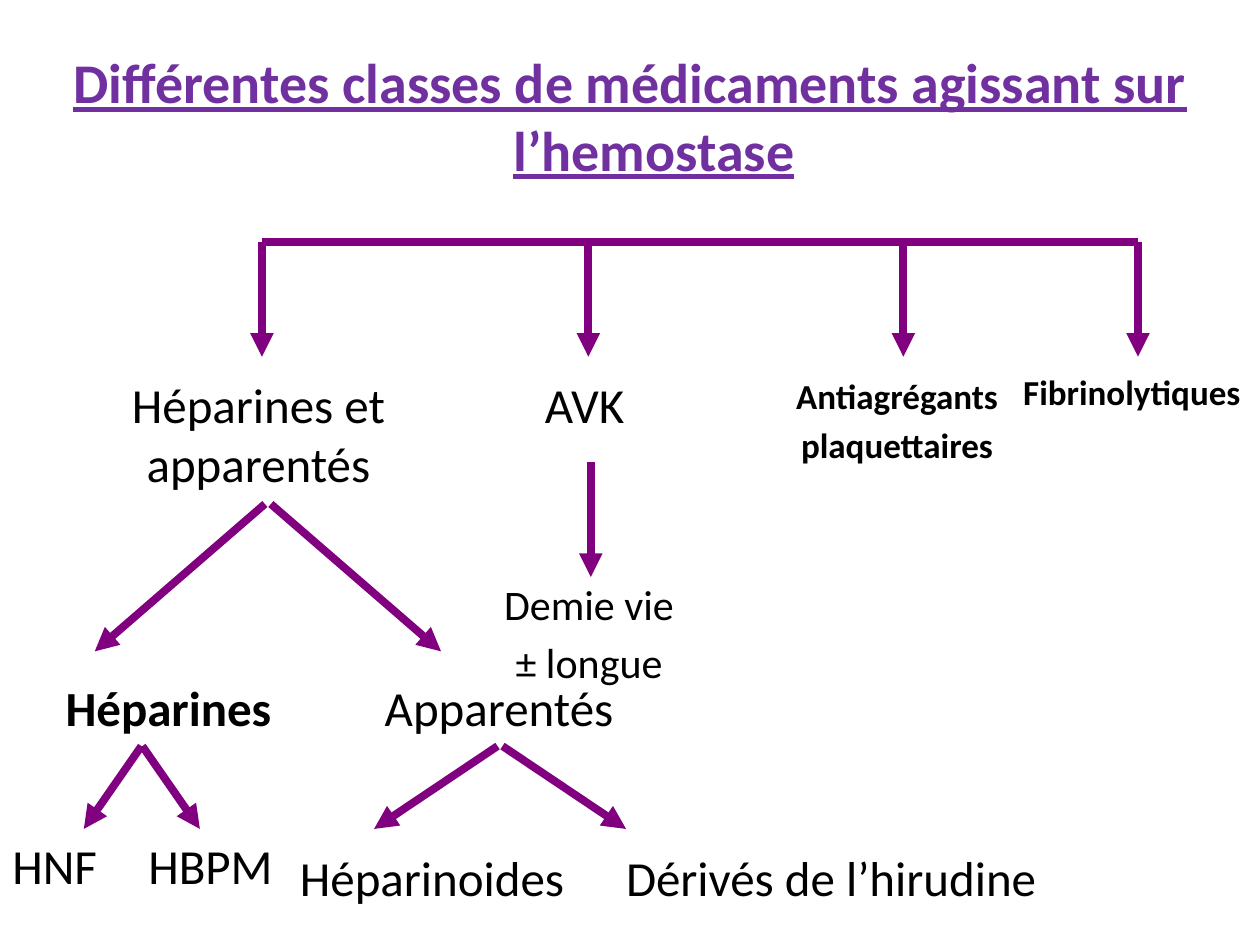
from dataclasses import dataclass

from lxml.etree import SubElement
from pptx import Presentation
from pptx.dml.color import RGBColor as RGB
from pptx.enum.shapes import MSO_CONNECTOR as Link
from pptx.enum.text import PP_ALIGN as Align
from pptx.oxml.ns import qn
from pptx.util import Cm, Pt


@dataclass(frozen=True)
class Theme:
    font: str = "Calibri"
    ink: RGB = RGB(0x00, 0x00, 0x00)
    title: RGB = RGB(0x70, 0x30, 0xA0)
    arrow: RGB = RGB(0x80, 0x00, 0x80)
    stroke: float = 4.5
    huge: int = 32
    big: int = 28
    mid: int = 24
    small: int = 20


THEME = Theme()


def add_text(slide, box, lines, size=THEME.big, bold=False, align=Align.CENTER):
    """Add a text box with one paragraph per line; return its frame."""
    frame = slide.shapes.add_textbox(*map(Cm, box)).text_frame
    frame.word_wrap = True
    for i, line in enumerate(lines):
        para = frame.add_paragraph() if i else frame.paragraphs[0]
        para.alignment = align
        if i:
            para.space_before = Pt(size * 0.2)
        run = para.add_run()
        run.text = line
        font = run.font
        font.name, font.size, font.bold = THEME.font, Pt(size), bold
        font.color.rgb = THEME.ink
    return frame


def add_title(slide, box, text):
    frame = add_text(slide, box, [text], THEME.huge, True)
    para = frame.paragraphs[0]
    font = para.runs[0].font
    font.underline = True
    font.color.rgb = THEME.title
    # Hanging indent: shifts the second line to the right
    props = para._p.get_or_add_pPr()
    props.set("marL", str(Cm(0.95)))
    props.set("indent", str(-Cm(0.95)))


def add_line(slide, x1, y1, x2, y2, head=True):
    line = slide.shapes.add_connector(Link.STRAIGHT, *map(Cm, (x1, y1, x2, y2)))
    line.line.color.rgb = THEME.arrow
    line.line.width = Pt(THEME.stroke)
    if head:
        SubElement(line.line._get_or_add_ln(), qn("a:tailEnd"), type="triangle")
    SubElement(line._element.spPr, qn("a:effectLst"))


def add_fork(slide, mid, gap, reach, top, foot):
    """Two arrows that spread evenly from a middle line."""
    for side in (1, -1):
        add_line(slide, mid + side * gap, top, mid + side * reach, foot)


def main():
    deck = Presentation()
    deck.slide_width, deck.slide_height = Cm(25.4), Cm(19.05)
    slide = deck.slides.add_slide(deck.slide_layouts[6])

    add_title(slide, (0.43, 0.84, 24.56, 3.61),
              "Différentes classes de médicaments agissant sur l’hemostase")

    # Top bar with one arrow per drug class
    stems = (5.28, 11.86, 18.21, 22.94)
    bar, tip = 4.88, 7.19
    add_line(slide, stems[0], bar, stems[-1], bar, head=False)
    for x in stems:
        add_line(slide, x, bar, x, tip)

    # Drug classes
    row = 7.42
    add_text(slide, (2.11, row, 6.2, 1.9), ["Héparines et apparentés"])
    add_text(slide, (10.31, row, 2.95, 1.9), ["AVK"])
    add_text(slide, (14.81, row, 6.55, 2.74),
             ["Antiagrégants", "plaquettaires"], THEME.small, True)
    add_text(slide, (20.24, 7.34, 5.16, 2.77),
             ["Fibrinolytiques"], THEME.small, True)

    # AVK branch
    add_line(slide, 11.91, 9.32, 11.91, 11.63)
    add_text(slide, (9.12, 11.53, 5.51, 2.97),
             ["Demie vie", "± longue"], THEME.mid)

    # Heparin branch
    add_fork(slide, 5.4, 0.06, 3.49, 10.16, 13.13)
    row = 13.54
    add_text(slide, (0.64, row, 5.51, 1.9), ["Héparines"], bold=True)
    add_text(slide, (7.42, row, 5.28, 1.9), ["Apparentés"])

    # Lowest level
    top, foot = 15.04, 16.71
    add_fork(slide, 2.86, 0.01, 1.17, top, foot)
    add_fork(slide, 10.08, 0.05, 2.54, top, foot)
    add_text(slide, (0, foot, 2.74, 1.7), ["HNF"], align=Align.LEFT)
    add_text(slide, (2.74, foot, 3.33, 1.7), ["HBPM"], align=Align.LEFT)
    row = 16.97
    add_text(slide, (5.56, row, 6.3, 1.7), ["Héparinoides"])
    add_text(slide, (12.12, row, 9.27, 1.7), ["Dérivés de l’hirudine"])

    deck.save("out.pptx")


if __name__ == "__main__":
    main()
